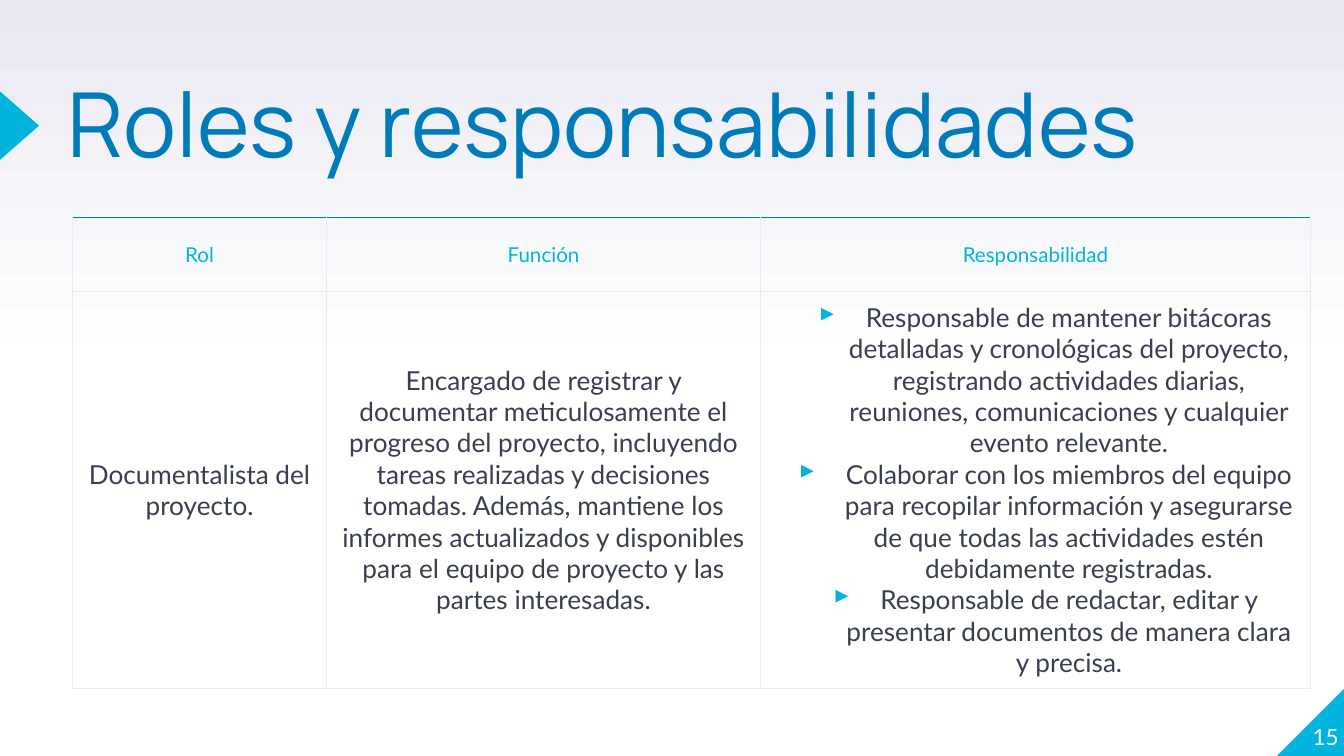
from pptx import Presentation
from pptx.dml.color import RGBColor
from pptx.enum.shapes import MSO_SHAPE
from pptx.enum.text import MSO_ANCHOR, MSO_AUTO_SIZE, PP_ALIGN
from pptx.oxml.ns import qn
from pptx.util import Inches, Pt
from lxml import etree

TRIANGLE, CORNER = MSO_SHAPE.ISOSCELES_TRIANGLE, MSO_SHAPE.RIGHT_TRIANGLE
TOP, MIDDLE, BOTTOM = MSO_ANCHOR.TOP, MSO_ANCHOR.MIDDLE, MSO_ANCHOR.BOTTOM
LEFT, CENTER, RIGHT = PP_ALIGN.LEFT, PP_ALIGN.CENTER, PP_ALIGN.RIGHT
COLORS = {"title": "007BB9", "accent": "00B5DD", "text": "3A3F50",
          "rule": "E9EAF2", "white": "FFFFFF"}


def grid(*units):
    """Lengths on a grid of 100 columns across the slide, with square cells."""
    return [int(u * prs.slide_width / 100) for u in units]


def write(p, text, size, color, align, font="Lato"):
    p.alignment = align
    r = p.add_run()
    r.text = text
    r.font.name, r.font.size = font, Pt(size)
    r.font.color.rgb = RGBColor.from_string(COLORS[color])


prs = Presentation()
prs.slide_width, prs.slide_height = Inches(10), Inches(5.625)
s = prs.slides.add_slide(prs.slide_layouts[5])

# Background: white lower half, fading to lavender at the top
fill = s.background.fill
fill.gradient()
fill.gradient_angle = 90
for stop, position, color in zip(fill.gradient_stops, (0.5, 1), ("white", "rule")):
    stop.position = position
    stop.color.rgb = RGBColor.from_string(COLORS[color])

# Title marker and page corner
for kind, box, angle in ((CORNER, (95, 51.15, 5.1, 5.1), 270),
                         (TRIANGLE, (-1.1, 7.9, 5.1, 2.9), 90)):
    sp = s.shapes.add_shape(kind, *grid(*box))
    sp.rotation = angle
    sp.shadow.inherit = False
    sp.fill.solid()
    sp.fill.fore_color.rgb = RGBColor.from_string(COLORS["accent"])
    sp.line.fill.background()

# Title and page number
title = s.shapes.title
title.left, title.top, title.width, title.height = grid(5, 6.6, 92.8, 11.8)
number = s.shapes.add_textbox(*grid(94.6, 50.7, 5, 5.1))
for sp, anchor in ((title, TOP), (number, BOTTOM)):
    tf = sp.text_frame
    tf.auto_size, tf.word_wrap, tf.vertical_anchor = MSO_AUTO_SIZE.NONE, True, anchor
    tf.margin_left = tf.margin_right = tf.margin_top = tf.margin_bottom = 0
p = title.text_frame.paragraphs[0]
p.line_spacing = 0.8
write(p, "Roles y responsabilidades", 48, "title", LEFT, "Manrope")
write(number.text_frame.paragraphs[0], "15", 12, "white", RIGHT)

# Table: each cell is a list of paragraphs
ROWS = [
    [["Rol"], ["Función"], ["Responsabilidad"]],
    [["Documentalista del proyecto."],
     ["Encargado de registrar y documentar meticulosamente el progreso del proyecto, "
      "incluyendo tareas realizadas y decisiones tomadas. Además, mantiene los informes "
      "actualizados y disponibles para el equipo de proyecto y las partes interesadas."],
     ["Responsable de mantener bitácoras detalladas y cronológicas del proyecto, "
      "registrando actividades diarias, reuniones, comunicaciones y cualquier evento "
      "relevante.",
      "Colaborar con los miembros del equipo para recopilar información y asegurarse de "
      "que todas las actividades estén debidamente registradas.",
      "Responsable de redactar, editar y presentar documentos de manera clara y precisa."]],
]
WIDTHS, HEIGHTS = (18.9, 32.3, 40.9), (5.5, 29.5)
table = s.shapes.add_table(len(HEIGHTS), len(WIDTHS),
                           *grid(5.4, 16.2, sum(WIDTHS), sum(HEIGHTS))).table
table.first_row = table.horz_banding = False
for column, width in zip(table.columns, grid(*WIDTHS)):
    column.width = width
for row, height in zip(table.rows, grid(*HEIGHTS)):
    row.height = height

for i, row in enumerate(ROWS):
    size, color = (14, "text") if i else (11, "accent")
    for j, paragraphs in enumerate(row):
        cell = table.cell(i, j)
        cell.vertical_anchor = MIDDLE
        cell.margin_left = cell.margin_right = Inches(0.1)
        cell.margin_top = cell.margin_bottom = Inches(0.07)
        tcPr = cell._tc.get_or_add_tcPr()
        for side in ("lnL", "lnR", "lnT", "lnB"):
            ln = etree.SubElement(tcPr, qn(f"a:{side}"), w=str(Pt(0.75)))
            paint = etree.SubElement(ln, qn("a:solidFill"))
            rule = "title" if side == "lnT" and i == 0 else "rule"
            etree.SubElement(paint, qn("a:srgbClr"), val=COLORS[rule])
        cell.fill.background()

        tf = cell.text_frame
        for k, text in enumerate(paragraphs):
            p = tf.add_paragraph() if k else tf.paragraphs[0]
            write(p, text, size, color, CENTER)
            if len(paragraphs) > 1:
                pPr = p._p.get_or_add_pPr()
                pPr.set("marL", str(Inches(0.5)))
                pPr.set("indent", str(Inches(-0.35)))
                paint = etree.SubElement(pPr, qn("a:buClr"))
                etree.SubElement(paint, qn("a:srgbClr"), val=COLORS["accent"])
                etree.SubElement(pPr, qn("a:buChar"), char="▸")

prs.save("out.pptx")
